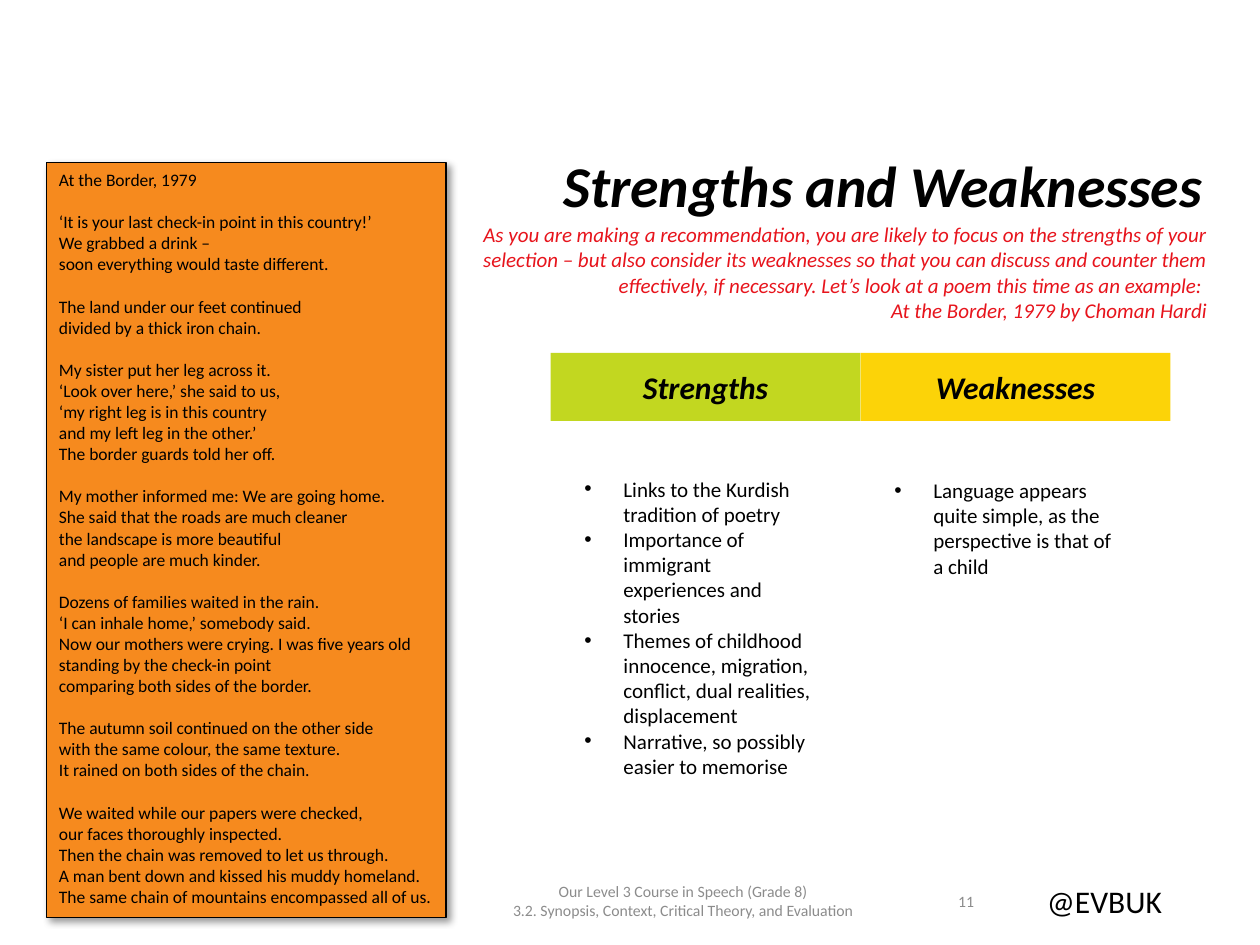
from typing import NamedTuple, Optional

from lxml import etree
from pptx import Presentation
from pptx.dml.color import RGBColor
from pptx.enum.shapes import MSO_SHAPE
from pptx.enum.text import MSO_ANCHOR, PP_ALIGN
from pptx.oxml.ns import qn
from pptx.util import Inches, Pt

RECT = MSO_SHAPE.RECTANGLE
TOP, MIDDLE = MSO_ANCHOR.TOP, MSO_ANCHOR.MIDDLE
LEFT, CENTER, RIGHT = PP_ALIGN.LEFT, PP_ALIGN.CENTER, PP_ALIGN.RIGHT

BLACK = RGBColor(0x00, 0x00, 0x00)
GREY = RGBColor(0x8C, 0x8C, 0x8C)
RED = RGBColor(0xE7, 0x14, 0x1C)
GREEN = RGBColor(0xC2, 0xD7, 0x20)
YELLOW = RGBColor(0xFC, 0xD3, 0x08)
ORANGE = RGBColor(0xF6, 0x8A, 0x1E)

FONT = "Calibri"
COLUMN_LEFT, COLUMN_WIDTH = 4.37, 2.46

POEM = [
    ["At the Border, 1979"],
    ["‘It is your last check-in point in this country!’",
     "We grabbed a drink –",
     "soon everything would taste different."],
    ["The land under our feet continued",
     "divided by a thick iron chain."],
    ["My sister put her leg across it.",
     "‘Look over here,’ she said to us,",
     "‘my right leg is in this country",
     "and my left leg in the other.’",
     "The border guards told her off."],
    ["My mother informed me: We are going home.",
     "She said that the roads are much cleaner",
     "the landscape is more beautiful",
     "and people are much kinder."],
    ["Dozens of families waited in the rain.",
     "‘I can inhale home,’ somebody said.",
     "Now our mothers were crying. I was five years old",
     "standing by the check-in point",
     "comparing both sides of the border."],
    ["The autumn soil continued on the other side",
     "with the same colour, the same texture.",
     "It rained on both sides of the chain."],
    ["We waited while our papers were checked,",
     "our faces thoroughly inspected.",
     "Then the chain was removed to let us through.",
     "A man bent down and kissed his muddy homeland.",
     "The same chain of mountains encompassed all of us."],
]


class Box(NamedTuple):
    left: float
    top: float
    width: float
    height: float


class Style(NamedTuple):
    size: float
    color: RGBColor = BLACK
    bold: bool = False
    italic: bool = False
    align: PP_ALIGN = LEFT
    anchor: MSO_ANCHOR = TOP


class Column(NamedTuple):
    heading: str
    fill: RGBColor
    top: float
    height: float
    points: list[str]


COLUMNS = [
    Column("Strengths", GREEN, 3.73, 3.13, [
        "Links to the Kurdish tradition of poetry",
        "Importance of immigrant experiences and stories",
        "Themes of childhood innocence, migration, conflict, dual realities, displacement",
        "Narrative, so possibly easier to memorise"]),
    Column("Weaknesses", YELLOW, 3.74, 1.11, [
        "Language appears quite simple, as the perspective is that of a child"]),
]


def place(sp, box: Box) -> None:
    sp.left, sp.top, sp.width, sp.height = (Inches(v) for v in box)


def add_bullet(p) -> None:
    pPr = p._p.get_or_add_pPr()
    pPr.set("marL", str(Inches(0.31)))
    pPr.set("indent", str(-Inches(0.31)))
    etree.SubElement(pPr, qn("a:buFont")).set("typeface", "Arial")
    etree.SubElement(pPr, qn("a:buChar")).set("char", "•")


def write(sp, lines: list[str], style: Style, bullets: bool = False) -> None:
    tf = sp.text_frame
    tf.word_wrap = True
    tf.vertical_anchor = style.anchor
    for i, line in enumerate(lines):
        p = tf.paragraphs[0] if i == 0 else tf.add_paragraph()
        p.text = line
        p.alignment = style.align
        if bullets:
            add_bullet(p)
        for r in p.runs:
            r.font.name = FONT
            r.font.size = Pt(style.size)
            r.font.bold, r.font.italic = style.bold, style.italic
            r.font.color.rgb = style.color


def add_text(s, box: Box, lines: list[str], style: Style, bullets: bool = False) -> None:
    sp = s.shapes.add_textbox(*(Inches(v) for v in box))
    write(sp, lines, style, bullets)


def add_panel(s, box: Box, fill: RGBColor, line: Optional[RGBColor] = None):
    sp = s.shapes.add_shape(RECT, *(Inches(v) for v in box))
    sp.shadow.inherit = False
    sp.fill.solid()
    sp.fill.fore_color.rgb = fill
    if line is None:
        sp.line.fill.background()
    else:
        sp.line.color.rgb = line
        sp.line.width = Pt(0.75)
    return sp


def add_shadow(sp) -> None:
    effects = sp._element.spPr.find(qn("a:effectLst"))
    shadow = etree.SubElement(effects, qn("a:outerShdw"), blurRad=str(Pt(4)),
                              dist=str(Pt(3)), dir="2700000", algn="tl", rotWithShape="0")
    color = etree.SubElement(shadow, qn("a:srgbClr"), val=str(BLACK))
    etree.SubElement(color, qn("a:alpha"), val="40000")


def add_column(s, index: int, column: Column) -> None:
    left = COLUMN_LEFT + index * COLUMN_WIDTH
    header = add_panel(s, Box(left, 2.8, COLUMN_WIDTH, 0.54), column.fill)
    write(header, [column.heading], Style(18, BLACK, True, True, CENTER, MIDDLE))
    add_text(s, Box(left + 0.17, column.top, 2.03, column.height),
             column.points, Style(12), bullets=True)


def add_poem(s) -> None:
    sp = add_panel(s, Box(0.37, 1.29, 3.17, 5.99), ORANGE, BLACK)
    add_shadow(sp)
    write(sp, [line for stanza in POEM for line in stanza], Style(10))
    # One line of space before each stanza after the heading
    start = 0
    for stanza in POEM[:-1]:
        start += len(stanza)
        sp.text_frame.paragraphs[start].space_before = Pt(12.2)


def main() -> None:
    prs = Presentation()
    prs.slide_width, prs.slide_height = Inches(10), Inches(7.5)
    s = prs.slides.add_slide(prs.slide_layouts[5])

    # Title and introduction
    title = s.shapes.title
    place(title, Box(4.37, 0.99, 5.41, 1.02))
    write(title, ["Strengths and Weaknesses"], Style(33, BLACK, True, True, LEFT, MIDDLE))
    title.text_frame.paragraphs[0].line_spacing = 0.9
    add_text(s, Box(3.63, 1.71, 6.05, 0.91), [
        "As you are making a recommendation, you are likely to focus on the strengths "
        "of your selection – but also consider its weaknesses so that you can discuss "
        "and counter them effectively, if necessary. Let’s look at a poem this time as "
        "an example: \vAt the Border, 1979 by Choman Hardi"],
        Style(12, RED, italic=True, align=RIGHT))

    # Comparison columns and poem
    for i, column in enumerate(COLUMNS):
        add_column(s, i, column)
    add_poem(s)

    # Footer
    add_text(s, Box(3.73, 6.95, 3.38, 0.4), [
        "Our Level 3 Course in Speech (Grade 8)\v"
        "3.2. Synopsis, Context, Critical Theory, and Evaluation"],
        Style(9, GREY, align=CENTER, anchor=MIDDLE))
    add_text(s, Box(6.2, 6.95, 1.63, 0.4), ["11"],
             Style(9, GREY, align=RIGHT, anchor=MIDDLE))
    add_text(s, Box(8.21, 6.95, 1.12, 0.4), ["@EVBUK"], Style(18))

    prs.save("out.pptx")


if __name__ == "__main__":
    main()
